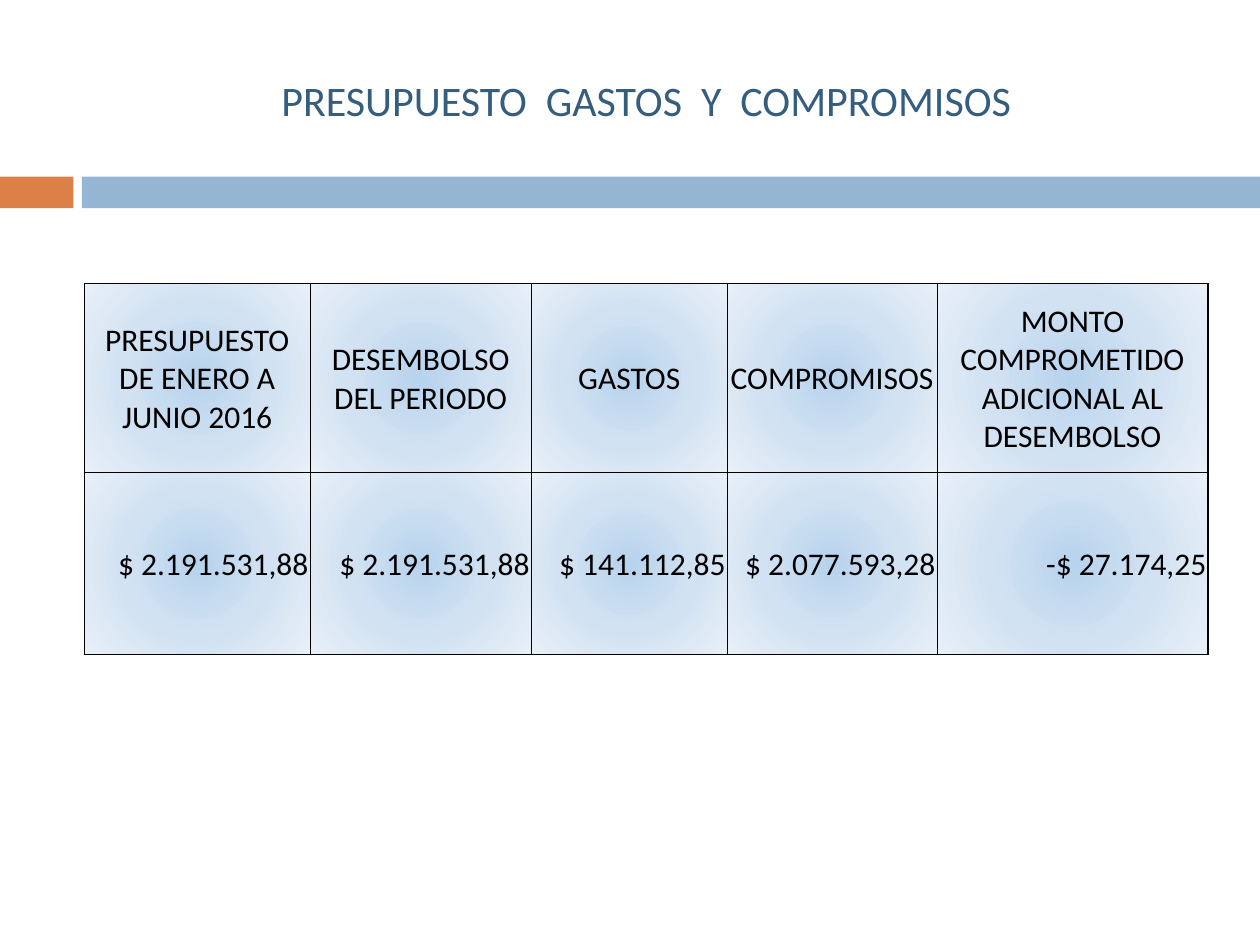
from dataclasses import dataclass

from pptx import Presentation
from pptx.dml.color import RGBColor
from pptx.enum.shapes import MSO_SHAPE
from pptx.enum.text import MSO_ANCHOR as Anchor, PP_ALIGN as Align
from pptx.oxml import parse_xml
from pptx.slide import Slide
from pptx.table import _Cell as Cell
from pptx.text.text import TextFrame
from pptx.util import Cm, Pt

DRAWING_NS = "http://schemas.openxmlformats.org/drawingml/2006/main"


@dataclass(frozen=True)
class Theme:
    font: str = "Calibri"
    title_size: int = 24
    table_size: int = 18
    title: str = "355D7E"
    ink: str = "000000"
    accent: str = "DD8047"
    band: str = "94B6D2"
    glow: tuple[tuple[int, str], ...] = ((0, "B7D3ED"), (50, "D2E2F2"), (100, "E8F0F8"))
    outer_line: float = 1
    inner_line: float = 0.5


@dataclass(frozen=True)
class Bar:
    left: float
    width: float
    color: str


@dataclass(frozen=True)
class BudgetItem:
    heading: str
    amount: str
    width: float


THEME = Theme()
CONTENT_LEFT, CONTENT_WIDTH = 1.7, 22.66
BAR_TOP, BAR_HEIGHT = 3.56, 0.64
TABLE_TOP = 5.72
ROW_HEIGHTS = (3.81, 3.66)
BARS = (Bar(0, 1.48, THEME.accent), Bar(1.65, 23.75, THEME.band))
BUDGET = (
    BudgetItem("PRESUPUESTO DE ENERO A JUNIO 2016", "$ 2.191.531,88", 4.55),
    BudgetItem("DESEMBOLSO DEL PERIODO", "$ 2.191.531,88", 4.46),
    BudgetItem("GASTOS", "$ 141.112,85", 3.95),
    BudgetItem("COMPROMISOS", "$ 2.077.593,28", 4.23),
    BudgetItem("MONTO COMPROMETIDO ADICIONAL AL DESEMBOLSO", "-$ 27.174,25", 5.46),
)


def write(frame: TextFrame, text: str, *, size: float, color: str, align: Align) -> None:
    """Fill a text frame with one formatted paragraph."""
    paragraph = frame.paragraphs[0]
    paragraph.alignment = align
    run = paragraph.add_run()
    run.text = text
    run.font.name = THEME.font
    run.font.size = Pt(size)
    run.font.bold = False
    run.font.color.rgb = RGBColor.from_string(color)


def draw_bar(slide: Slide, bar: Bar) -> None:
    """Draw one part of the band under the title."""
    band = slide.shapes.add_shape(
        MSO_SHAPE.RECTANGLE, Cm(bar.left), Cm(BAR_TOP), Cm(bar.width), Cm(BAR_HEIGHT)
    )
    band.shadow.inherit = False
    band.fill.solid()
    band.fill.fore_color.rgb = RGBColor.from_string(bar.color)
    band.line.fill.background()


def style_cell(cell: Cell, outer_sides: dict[str, bool]) -> None:
    """Give a cell its borders and its radial fill."""
    properties = cell._tc.get_or_add_tcPr()
    for side, is_outer in outer_sides.items():
        width = Pt(THEME.outer_line if is_outer else THEME.inner_line)
        properties.append(parse_xml(
            f'<a:ln{side} xmlns:a="{DRAWING_NS}" w="{width}"><a:solidFill>'
            f'<a:srgbClr val="{THEME.ink}"/></a:solidFill></a:ln{side}>'
        ))
    stops = "".join(
        f'<a:gs pos="{position * 1000}"><a:srgbClr val="{color}"/></a:gs>'
        for position, color in THEME.glow
    )
    properties.append(parse_xml(
        f'<a:gradFill xmlns:a="{DRAWING_NS}" rotWithShape="1"><a:gsLst>{stops}</a:gsLst>'
        '<a:path path="circle"><a:fillToRect l="50000" t="50000" r="50000" b="50000"/>'
        "</a:path></a:gradFill>"
    ))


def draw_budget(slide: Slide, items: tuple[BudgetItem, ...]) -> None:
    """Draw the table of headings and amounts."""
    budget = slide.shapes.add_table(
        len(ROW_HEIGHTS), len(items), Cm(CONTENT_LEFT), Cm(TABLE_TOP),
        Cm(CONTENT_WIDTH), Cm(sum(ROW_HEIGHTS)),
    ).table
    budget.first_row = budget.horz_banding = False
    for row, height in zip(budget.rows, ROW_HEIGHTS):
        row.height = Cm(height)
    last_row, last_column = len(ROW_HEIGHTS) - 1, len(items) - 1
    for column, item in enumerate(items):
        budget.columns[column].width = Cm(item.width)
        entries = ((item.heading, Align.CENTER), (item.amount, Align.RIGHT))
        for row, (text, align) in enumerate(entries):
            cell = budget.cell(row, column)
            cell.margin_left = cell.margin_right = cell.margin_top = Cm(0.03)
            cell.margin_bottom = 0
            cell.vertical_anchor = Anchor.MIDDLE
            write(cell.text_frame, text, size=THEME.table_size, color=THEME.ink, align=align)
            style_cell(cell, {
                "L": column == 0, "R": column == last_column,
                "T": row == 0, "B": row == last_row,
            })


def main() -> None:
    """Build and save the budget slide."""
    deck = Presentation()
    deck.slide_width, deck.slide_height = Cm(25.4), Cm(19.05)
    slide = deck.slides.add_slide(deck.slide_layouts[5])
    title = slide.shapes.title
    title.left, title.top = Cm(CONTENT_LEFT), Cm(0.64)
    title.width, title.height = Cm(CONTENT_WIDTH), Cm(2.74)
    title.text_frame.vertical_anchor = Anchor.MIDDLE
    write(title.text_frame, "PRESUPUESTO  GASTOS  Y  COMPROMISOS",
          size=THEME.title_size, color=THEME.title, align=Align.CENTER)
    for bar in BARS:
        draw_bar(slide, bar)
    draw_budget(slide, BUDGET)
    deck.save("out.pptx")


if __name__ == "__main__":
    main()
